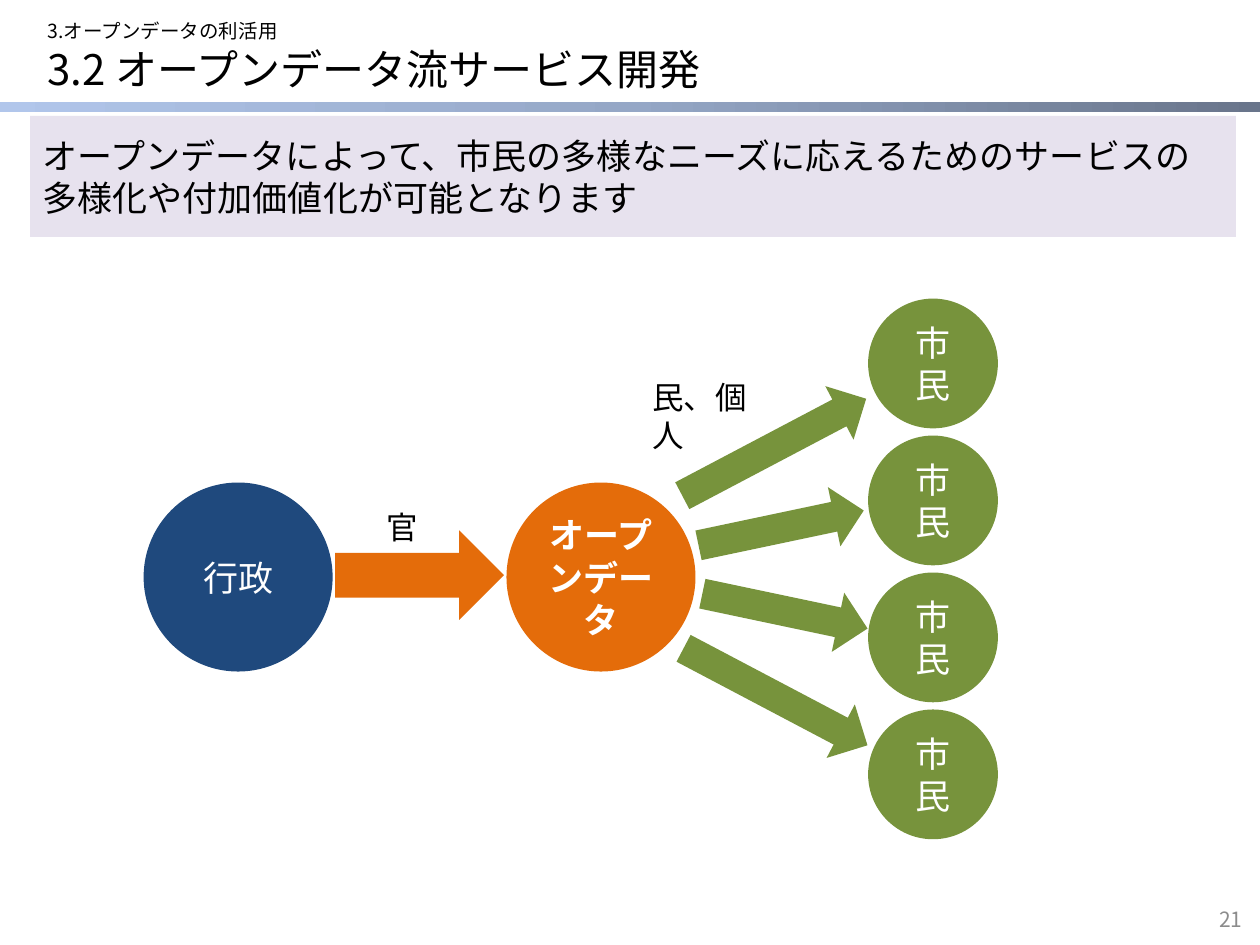
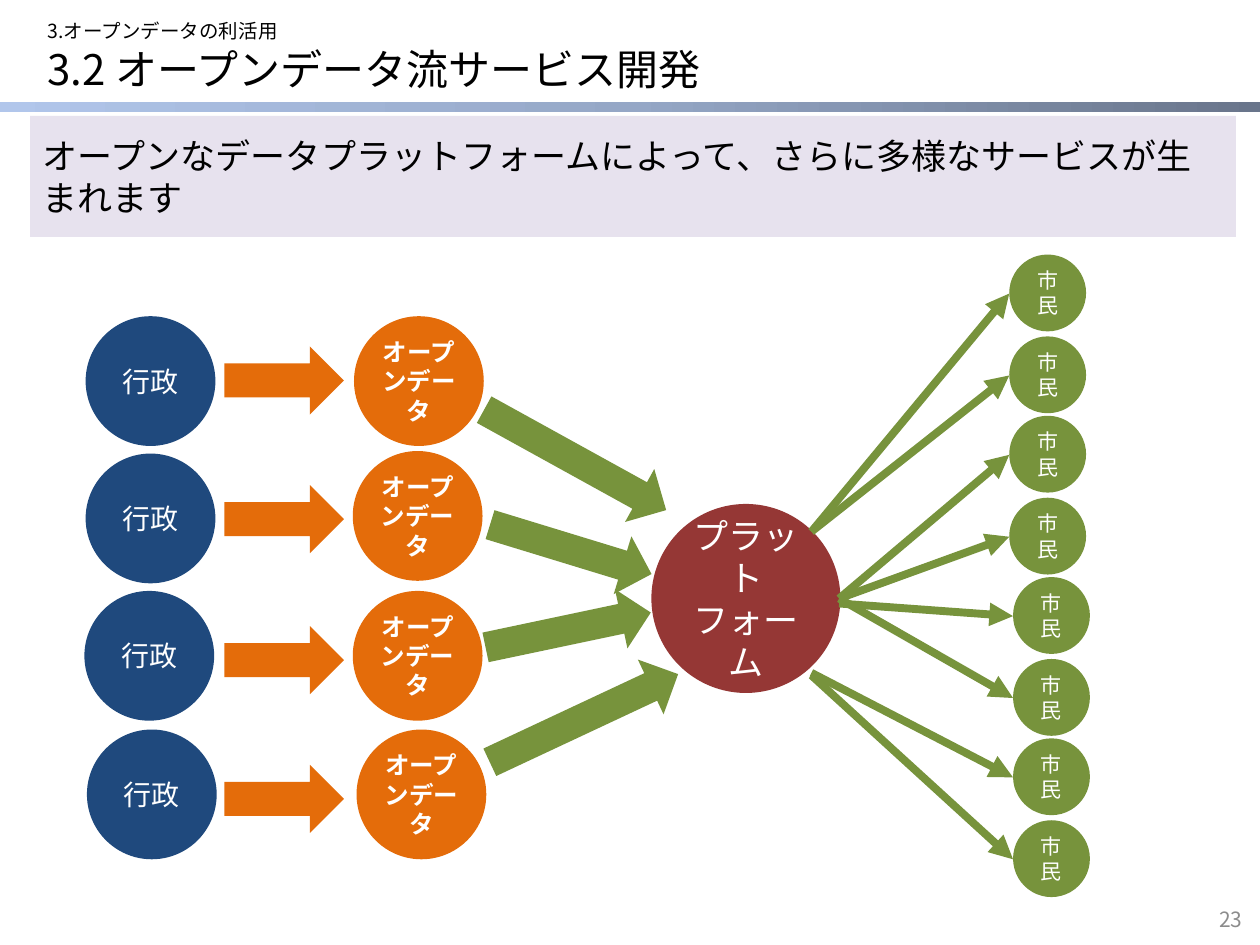
from copy import deepcopy

from pptx import Presentation
from pptx.dml.color import RGBColor
from pptx.enum.lang import MSO_LANGUAGE_ID
from pptx.enum.shapes import MSO_CONNECTOR, MSO_SHAPE
from pptx.enum.text import MSO_ANCHOR, PP_ALIGN
from pptx.oxml.ns import qn
from pptx.util import Inches, Pt
from lxml.etree import SubElement

FONT = "Noto Sans CJK JP"
BLACK = RGBColor(0x00, 0x00, 0x00)
WHITE = RGBColor(0xFF, 0xFF, 0xFF)
GRAY = RGBColor(0x8C, 0x8C, 0x8C)
NAVY = RGBColor(0x1F, 0x49, 0x7D)
ORANGE = RGBColor(0xE4, 0x6C, 0x0A)
GREEN = RGBColor(0x77, 0x93, 0x3C)
RED = RGBColor(0x95, 0x37, 0x35)
LAVENDER = RGBColor(0xCC, 0xC1, 0xDA)
RULE_COLORS = [RGBColor(0xB1, 0xC6, 0xEB), RGBColor(0x95, 0xA7, 0xC6), RGBColor(0x69, 0x75, 0x8B)]

GOVERNMENT, OPEN_DATA, CITIZEN = "行政", "オープンデータ", "市民"
CIRCLE, ARROW = MSO_SHAPE.OVAL, MSO_SHAPE.RIGHT_ARROW


def write(shape, text, size, color=BLACK, align=PP_ALIGN.LEFT, anchor=MSO_ANCHOR.MIDDLE,
          bold=False, wrap=True, spacing=1.0, inset=None):
    """Put text into a shape; an inset in inches replaces the default margins."""
    frame = shape.text_frame
    frame.text = text
    frame.word_wrap = wrap
    frame.vertical_anchor = anchor
    if inset is not None:
        frame.margin_left = frame.margin_right = Inches(inset)
        frame.margin_top = frame.margin_bottom = Inches(inset)
    for paragraph in frame.paragraphs:
        paragraph.alignment = align
        paragraph.line_spacing = spacing
        for run in paragraph.runs:
            run.font.name = FONT
            run.font.size = Pt(size)
            run.font.bold = bold
            run.font.color.rgb = color
            run.font.language_id = MSO_LANGUAGE_ID.JAPANESE
            SubElement(run.font._element, qn("a:ea"), typeface=FONT)


def draw(slide, kind, left, top, width, height, color, text="", size=20, rotation=0):
    shape = slide.shapes.add_shape(kind, Inches(left), Inches(top), Inches(width), Inches(height))
    shape.shadow.inherit = False
    shape.fill.solid()
    shape.fill.fore_color.rgb = color
    shape.line.fill.background()
    shape.rotation = rotation
    if text:
        is_data = text == OPEN_DATA
        write(shape, text, size, WHITE, PP_ALIGN.CENTER, bold=is_data, inset=0 if is_data else None)
    return shape


presentation = Presentation()
presentation.slide_width = Inches(10)
presentation.slide_height = Inches(7.5)

# Rule, headings, message band and page number of every slide
slides = []
for page, message in [
    ("21", "オープンデータによって、市民の多様なニーズに応えるためのサービスの多様化や付加価値化が可能となります"),
    ("23", "オープンなデータプラットフォームによって、さらに多様なサービスが生まれます"),
]:
    slide = presentation.slides.add_slide(presentation.slide_layouts[6])
    slides.append(slide)

    rule = draw(slide, MSO_SHAPE.RECTANGLE, 0, 0.81, 10, 0.08, RULE_COLORS[0])
    rule.fill.gradient()
    rule.fill.gradient_angle = 0
    stop_list = rule._element.spPr.find(qn("a:gradFill")).find(qn("a:gsLst"))
    stop_list.append(deepcopy(stop_list[-1]))
    for index, stop in enumerate(rule.fill.gradient_stops):
        stop.position = index / 2
        stop.color.rgb = RULE_COLORS[index]

    number = slide.shapes.add_textbox(Inches(9.41), Inches(7.14), Inches(0.55), Inches(0.31))
    write(number, page, 12, GRAY, PP_ALIGN.RIGHT)
    title = slide.shapes.add_textbox(Inches(0.28), Inches(0.34), Inches(9.53), Inches(0.46))
    write(title, "3.2 オープンデータ流サービス開発", 24, wrap=False, spacing=0.9)
    chapter = slide.shapes.add_textbox(Inches(0.28), Inches(0.13), Inches(9.53), Inches(0.26))
    write(chapter, "3.オープンデータの利活用", 11.1, wrap=False, spacing=0.8)

    band = draw(slide, MSO_SHAPE.RECTANGLE, 0.24, 0.92, 9.57, 0.96, LAVENDER)
    SubElement(band._element.spPr.find(qn("a:solidFill"))[0], qn("a:alpha"), val="46000")
    write(band, message, 20)

# Slide 1: government to open data to citizens
slide = slides[0]
draw(slide, CIRCLE, 1.14, 3.83, 1.5, 1.5, NAVY, GOVERNMENT)
draw(slide, ARROW, 2.66, 4.21, 1.34, 0.71, ORANGE)
draw(slide, CIRCLE, 4.02, 3.83, 1.5, 1.5, ORANGE, OPEN_DATA)
for row, (left, top, width, rotation) in enumerate([
    (5.32, 3.31, 1.65, 332.2), (5.53, 3.95, 1.34, 348.1),
    (5.56, 4.61, 1.34, 11.9), (5.33, 5.29, 1.65, 27.8),
]):
    draw(slide, CIRCLE, 6.89, 2.37 + 1.087 * row, 1.03, 1.03, GREEN, CITIZEN)
    draw(slide, ARROW, left, top, width, 0.48, GREEN, rotation=rotation)
for text, left, top, width in [("官", 2.97, 3.98, 0.45), ("民、個人", 5.08, 2.95, 1.19)]:
    label = slide.shapes.add_textbox(Inches(left), Inches(top), Inches(width), Inches(0.4))
    write(label, text, 18, anchor=MSO_ANCHOR.TOP)

# Slide 2: governments to open data to a platform to citizens
slide = slides[1]
draw(slide, CIRCLE, 5.17, 4, 1.5, 1.5, RED, "プラット\nフォーム")
for government_left, data_left, data_top, arrow_top in [
    (0.68, 2.81, 2.51, 2.75), (0.68, 2.8, 3.58, 3.85),
    (0.67, 2.8, 4.69, 4.97), (0.69, 2.83, 5.79, 6.07),
]:
    government_top = 3.6 if data_top == 3.58 else data_top
    draw(slide, CIRCLE, government_left, government_top, 1.03, 1.03, NAVY, GOVERNMENT, 16)
    draw(slide, ARROW, 1.78, arrow_top, 0.95, 0.54, ORANGE)
    draw(slide, CIRCLE, data_left, data_top, 1.03, 1.03, ORANGE, OPEN_DATA, 14)
for left, top, width, rotation in [
    (3.74, 3.41, 1.65, 28.9), (3.86, 4.12, 1.34, 17),
    (3.84, 4.76, 1.34, 348.1), (3.81, 5.46, 1.65, 334.9),
]:
    draw(slide, ARROW, left, top, width, 0.48, GREEN, rotation=rotation)

line_starts = [(6.44, 4.22), (6.44, 4.22), (6.66, 4.75), (6.66, 4.75),
               (6.66, 4.79), (6.66, 4.75), (6.44, 5.34), (6.44, 5.36)]
for index, (start_x, start_y) in enumerate(line_starts):
    pair, second = divmod(index, 2)
    left = 8.01 if index < 4 else 8.04
    top = 2.02 + 1.28 * pair + 0.65 * second
    draw(slide, CIRCLE, left, top, 0.61, 0.61, GREEN, CITIZEN, 12)
    connector = slide.shapes.add_connector(
        MSO_CONNECTOR.STRAIGHT, Inches(start_x), Inches(start_y), Inches(left), Inches(top + 0.31))
    connector.line.color.rgb = GREEN
    connector.line.width = Pt(4.5)
    SubElement(connector.line._get_or_add_ln(), qn("a:tailEnd"), type="triangle")
    SubElement(connector._element.spPr, qn("a:effectLst"))

presentation.save("out.pptx")
